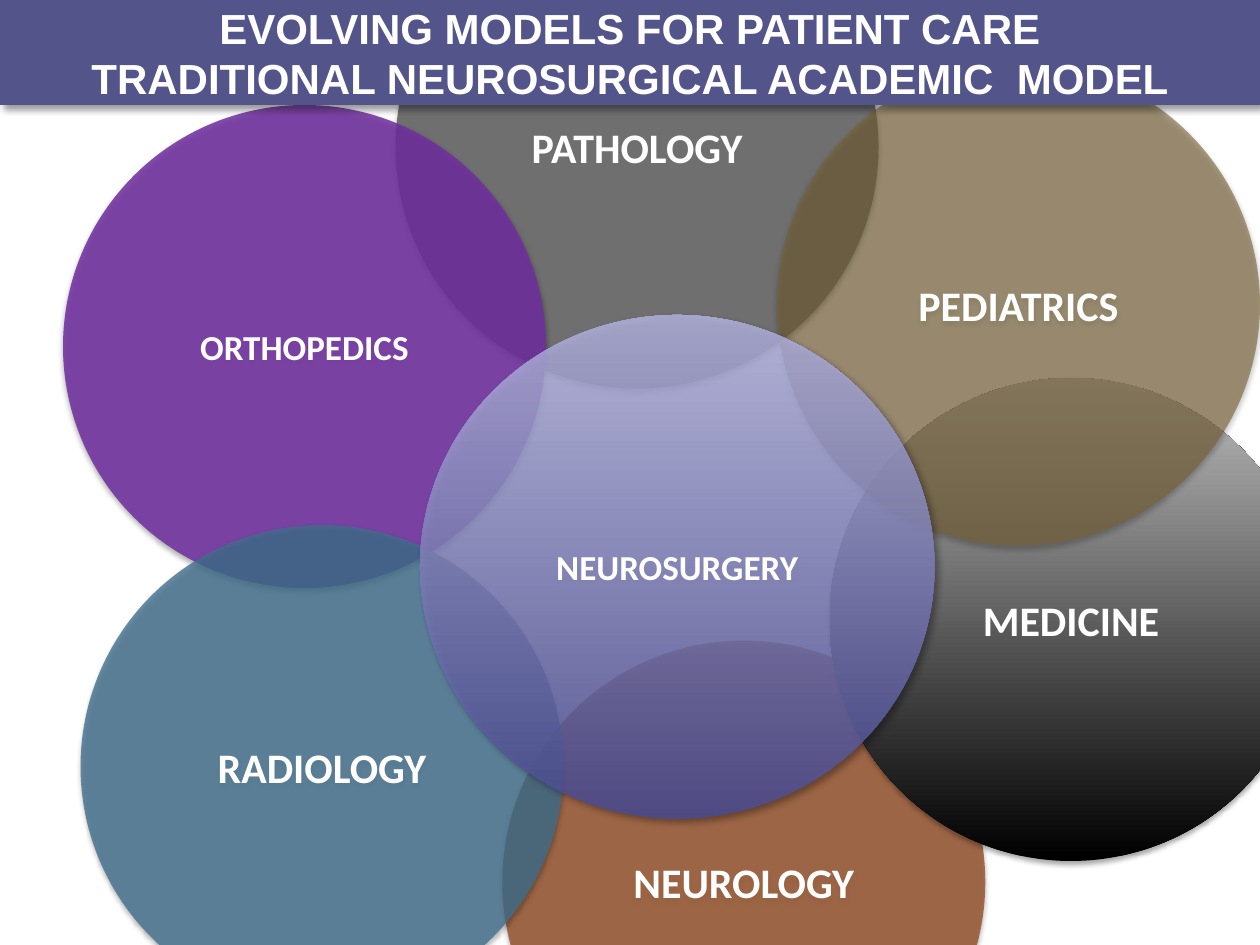
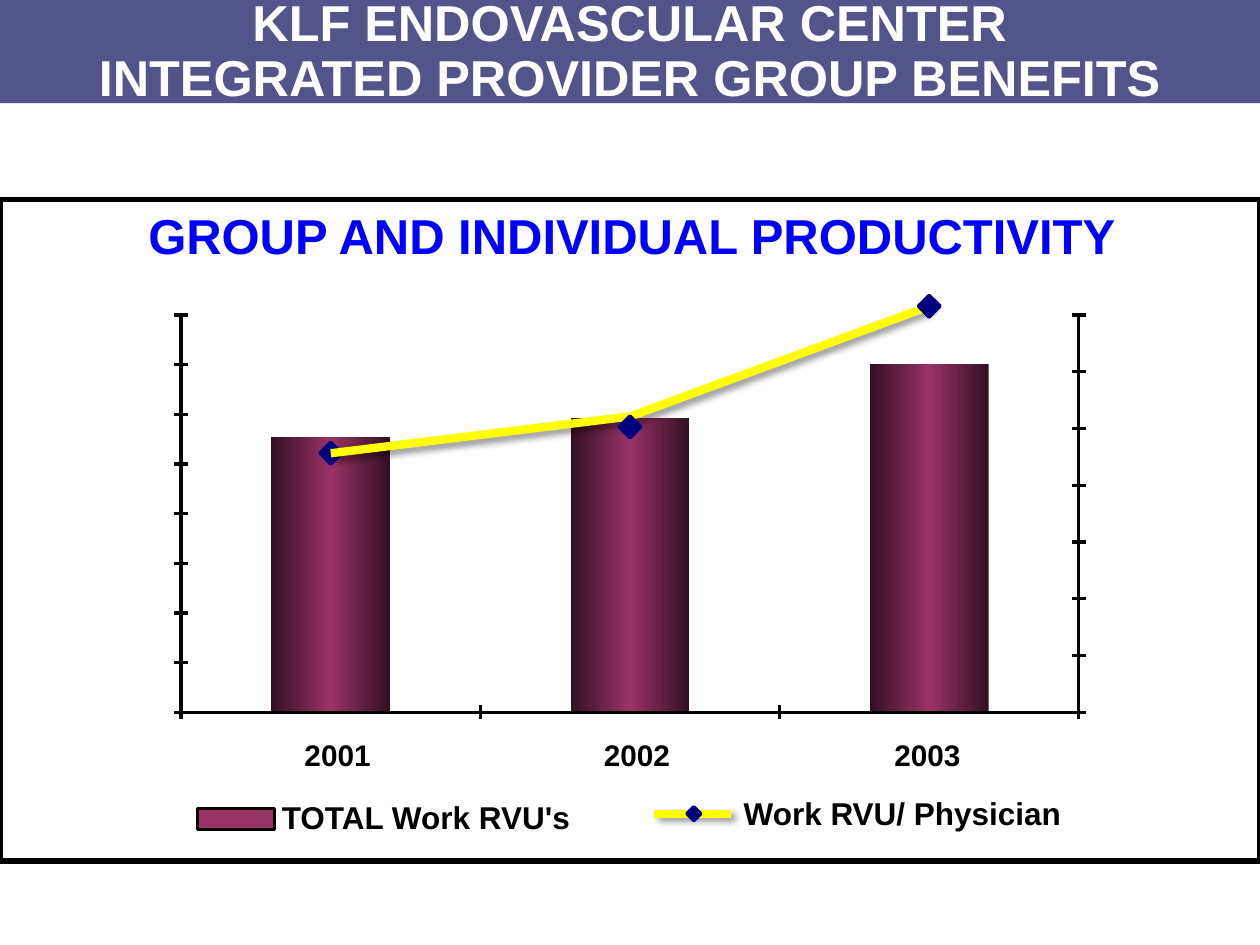
from lxml.etree import SubElement as Sub
from pptx import Presentation
from pptx.dml.color import RGBColor as Rgb
from pptx.enum.shapes import MSO_CONNECTOR as Conn, MSO_SHAPE as Form
from pptx.enum.text import MSO_ANCHOR as Anchor, MSO_AUTO_SIZE as Auto, PP_ALIGN as Align
from pptx.oxml.ns import qn
from pptx.util import Pt

HEX = {
    "white": "FFFFFF", "black": "000000", "band": "53548A",
    "gray": "6F6F6F", "rust": "934C22", "purple": "7030A0", "teal": "406F8D",
    "tan": "796235", "silver": "BDBDBD", "indigo": "4B4C92", "lilac": "B3B3DF",
    "plum": "993366", "wine": "321021", "yellow": "FFFF00", "navy": "000080",
    "blue": "0000FF",
}
WIDE, HIGH = 720, 540
THIN = 1.88
# Shadows: opacity in percent, blur, distance, angle
SOFT = (35, 3.1, 1.8, 90)
DEEP = (40, 4, 3, 45)


def tint(name):
    return Rgb.from_string(HEX[name])


def fade(node, share):
    Sub(node, qn("a:alpha"), val=str(share * 1000))


def shade(shape, look=None):
    """Clear the theme shadow, then add the given one."""
    props = shape._element.spPr
    for old in props.findall(qn("a:effectLst")):
        props.remove(old)
    list_ = Sub(props, qn("a:effectLst"))
    if look:
        share, blur, dist, angle = look
        drop = Sub(list_, qn("a:outerShdw"), blurRad=str(Pt(blur)), dist=str(Pt(dist)),
                   dir=str(angle * 60000), algn="ctr", rotWithShape="0")
        fade(Sub(drop, qn("a:srgbClr"), val=HEX["black"]), share)


def blend(shape, stops, angle, share=100):
    """Fill with evenly spaced colour stops."""
    shape.fill.gradient()
    grad = shape._element.spPr.find(qn("a:gradFill"))
    for part in list(grad):
        grad.remove(part)
    list_ = Sub(grad, qn("a:gsLst"))
    for i, name in enumerate(stops):
        stop = Sub(list_, qn("a:gs"), pos=str(i * 100000 // (len(stops) - 1)))
        fade(Sub(stop, qn("a:srgbClr"), val=HEX[name]), share)
    Sub(grad, qn("a:lin"), ang=str(angle * 60000), scaled="0")


def edge(shape, name=None, width=THIN):
    if name:
        shape.line.color.rgb = tint(name)
        shape.line.width = Pt(width)
    else:
        shape.line.fill.background()


def paint(shape, name, share=100):
    shape.fill.solid()
    shape.fill.fore_color.rgb = tint(name)
    if share < 100:
        fade(shape._element.spPr.find(qn("a:solidFill"))[0], share)


def draw(slide, form, box, fill=None, line=None, width=THIN):
    shape = slide.shapes.add_shape(form, *map(Pt, box))
    if fill:
        paint(shape, fill)
    edge(shape, line, width)
    shade(shape)
    return shape


def rule(slide, x1, y1, x2, y2, name="black", width=THIN, look=None):
    line = slide.shapes.add_connector(Conn.STRAIGHT, Pt(x1), Pt(y1), Pt(x2), Pt(y2))
    edge(line, name, width)
    shade(line, look)


def write(para, text, size, name, face="Arial"):
    run = para.add_run()
    run.text = text
    font = run.font
    font.name, font.size, font.bold = face, Pt(size), True
    font.color.rgb = tint(name)


def pad(frame, gap=0):
    frame.margin_left = frame.margin_right = Pt(gap)
    frame.margin_top = frame.margin_bottom = Pt(gap / 2)


def label(slide, box, text, size, name="black", mid=False):
    frame = slide.shapes.add_textbox(*map(Pt, box)).text_frame
    frame.word_wrap = mid
    pad(frame, 7.2 if mid else 0)
    para = frame.paragraphs[0]
    para.alignment = Align.CENTER if mid else Align.LEFT
    write(para, text, size, name)


def start(deck, left, lines, size, space):
    """Add a slide with the top band and its title."""
    slide = deck.slides.add_slide(deck.slide_layouts[5])
    draw(slide, Form.RECTANGLE, (0, 0, WIDE, 59), "band")
    title = slide.shapes.title
    title.left, title.top = Pt(left), Pt(0)
    title.width, title.height = Pt(WIDE - 2 * left), Pt(60)
    frame = title.text_frame
    frame.auto_size, frame.word_wrap = Auto.NONE, True
    frame.vertical_anchor = Anchor.MIDDLE
    pad(frame)
    para = frame.paragraphs[0]
    para.alignment, para.line_spacing = Align.CENTER, space
    for i, line in enumerate(lines):
        if i:
            para.add_line_break()
        write(para, line, size, "white")
    raise_(slide, title)
    return slide


def raise_(slide, shape):
    """Bring a shape to the front."""
    slide.shapes._spTree.append(shape._element)


def disc(slide, box, text, size, stops, share, look=SOFT):
    shape = draw(slide, Form.OVAL, box)
    if len(stops) > 1:
        blend(shape, stops, 270, share)
    else:
        paint(shape, stops[0], share)
    shade(shape, look)
    frame = shape.text_frame
    frame.word_wrap, frame.vertical_anchor = True, Anchor.MIDDLE
    frame.paragraphs[0].alignment = Align.CENTER
    write(frame.paragraphs[0], text, size, "white", "Calibri")


def models(deck):
    slide = start(deck, 0, ("EVOLVING MODELS FOR PATIENT CARE",
                            "TRADITIONAL NEUROSURGICAL ACADEMIC  MODEL"), 24, 1)
    fields = (
        (226, -54, "PATHOLOGY", 24, ["gray"], 100),
        (287, 366, "NEUROLOGY", 24, ["rust"], 77),
        (36, 60, "ORTHOPEDICS", 20, ["purple"], 86),
        (46, 300, "RADIOLOGY", 24, ["teal"], 79),
        (474, 216, "MEDICINE", 24, ["black", "silver"], 100),
        (444, 36, "PEDIATRICS", 24, ["tan"], 61),
    )
    for x, y, *rest in fields:
        disc(slide, (x, y, 276, 276), *rest)
    disc(slide, (240, 180, 294, 288), "NEUROSURGERY", 20, ["indigo", "lilac"], 83, DEEP)
    title = slide.shapes.title
    paint(title, "band")
    shade(title, DEEP)
    raise_(slide, title)


def gem(slide, x, y, size):
    half = size / 2
    draw(slide, Form.DIAMOND, (x - half, y - half, size, size), "navy", "navy")


def axes(slide, left, top, wide, high, slots):
    base, right, tick = top + high, left + wide, 4
    for x, count in ((left, 8), (right, 7)):
        rule(slide, x, top, x, base)
        for i in range(count + 1):
            y = base - high * i / count
            rule(slide, x - tick, y, x + tick, y)
    rule(slide, left, base, right, base)
    for i in range(slots + 1):
        x = left + wide * i / slots
        rule(slide, x, base - tick, x, base + tick)


def trend(slide, points):
    first, *rest = [(Pt(x), Pt(y)) for x, y in points]
    pen = slide.shapes.build_freeform(*first)
    pen.add_line_segments(rest, close=False)
    line = pen.convert_to_shape()
    line.fill.background()
    edge(line, "yellow", 4.75)
    shade(line, DEEP)


def plot(slide, left, top, wide, high):
    # Year, bar height, line height, marker height, shift of the year label
    data = (("2001", 157, 148, 148, 5), ("2002", 168, 169, 163, 5), ("2003", 199, 232, 232, 0))
    base, slot, thick = top + high, wide / len(data), 68
    mids = [left + slot * (i + 0.5) for i in range(len(data))]
    for x, (_, bar, *_) in zip(mids, data):
        shape = draw(slide, Form.RECTANGLE, (x - thick / 2, base - bar, thick, bar))
        blend(shape, ("wine", "plum", "wine"), 0)
    axes(slide, left, top, wide, high, len(data))
    for i, (x, (year, _, _, mark, shift)) in enumerate(zip(mids, data)):
        gem(slide, x, base - mark, 12.5)
        if i == 0:
            trend(slide, [(m, base - row[2]) for m, row in zip(mids, data)])
        label(slide, (x - 20 + shift, base + 14, 40, 23), year, 17)


def legend(slide, left, top):
    draw(slide, Form.RECTANGLE, (left, top + 8, 44, 12), "plum", "black")
    label(slide, (left + 48, top + 2, 176, 24), "TOTAL Work RVU's", 18)
    line = left + 261
    rule(slide, line, top + 11, line + 44, top + 11, "yellow", 4.5, DEEP)
    gem(slide, line + 22.5, top + 11, 8)
    label(slide, (line + 51, top, 194, 24), "Work RVU/ Physician", 18)


def gains(deck):
    slide = start(deck, 36, ("KLF ENDOVASCULAR CENTER",
                             "INTEGRATED PROVIDER GROUP BENEFITS"), 28.8, 0.9)
    top = 114
    draw(slide, Form.RECTANGLE, (0, top, WIDE, 378), "white", "black", 3)
    plot(slide, 103.5, top + 66, 513, 227)
    legend(slide, 113, top + 340)
    label(slide, (6.5, top, 709, 41), "GROUP AND INDIVIDUAL PRODUCTIVITY", 28, "blue", True)


def main():
    deck = Presentation()
    deck.slide_width, deck.slide_height = Pt(WIDE), Pt(HIGH)
    models(deck)
    gains(deck)
    deck.save("out.pptx")


if __name__ == "__main__":
    main()
